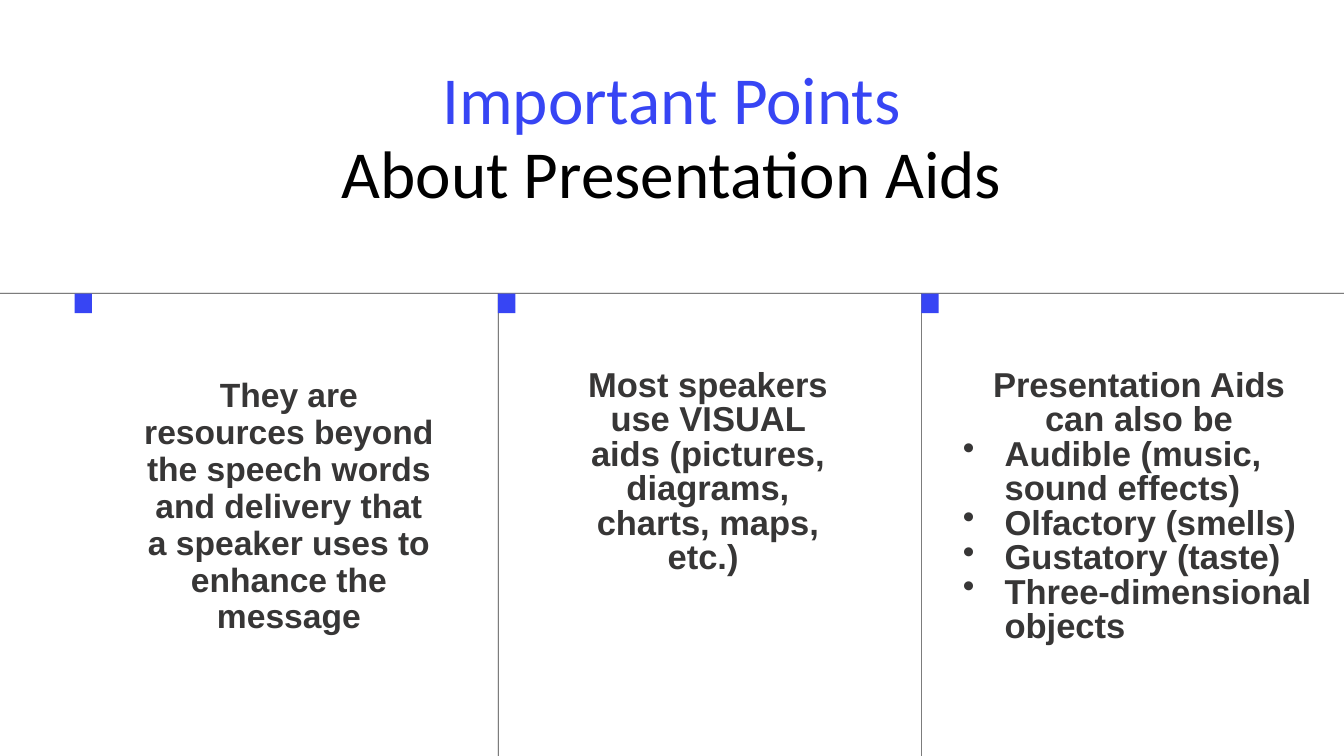
from pptx import Presentation
from pptx.dml.color import RGBColor
from pptx.enum.shapes import MSO_SHAPE
from pptx.enum.text import PP_ALIGN
from pptx.util import Pt
from lxml.etree import SubElement
from pptx.oxml.ns import qn

SCALE = 9144
WIDTH, HEIGHT = 2000, 1125
BLUE, GREY, BLACK = "3745F4", "373636", "000000"
RULE_TOP, RULE = 436, 1
COLUMN_LEFT, COLUMN_STEP = 111, 630


def px(length):
    """Turn px into EMU."""
    return length * SCALE


def color(hex_code):
    """Turn a hex string into a colour."""
    return RGBColor.from_string(hex_code)


def add_block(page, left, top, width, height, fill):
    """Draw a plain filled rectangle."""
    block = page.shapes.add_shape(
        MSO_SHAPE.RECTANGLE, px(left), px(top), px(width), px(height))
    block.shadow.inherit = False
    block.fill.solid()
    block.fill.fore_color.rgb = color(fill)
    block.line.fill.background()


def add_frame(page, left, top, width, height):
    """Place a wrapping text box without margins and return its frame."""
    box = page.shapes.add_textbox(px(left), px(top), px(width), px(height))
    frame = box.text_frame
    frame.word_wrap = True
    frame.margin_left = frame.margin_right = 0
    frame.margin_top = frame.margin_bottom = 0
    return frame


def style_body(para, size, spacing):
    """Give a paragraph the bold body font and fixed line spacing."""
    para.line_spacing = Pt(spacing)
    para.font.name = "Arial"
    para.font.size = Pt(size)
    para.font.bold = True
    para.font.color.rgb = color(GREY)


def set_indent(para, margin, first=0):
    """Set the left margin and first-line indent of a paragraph."""
    properties = para._p.get_or_add_pPr()
    properties.set("marL", str(px(margin)))
    properties.set("indent", str(px(first)))
    return properties


def add_title(page, left, top, width, height):
    """Write the two-line, two-colour title."""
    para = add_frame(page, left, top, width, height).paragraphs[0]
    para.alignment = PP_ALIGN.CENTER
    para.line_spacing = Pt(79.2)
    para.font.name = "Calibri"
    para.font.size = Pt(72)
    lines = [("Important Points", BLUE), ("About Presentation Aids", BLACK)]
    for number, (text, tone) in enumerate(lines):
        if number:
            para.add_line_break()
        span = para.add_run()
        span.text = text
        span.font.color.rgb = color(tone)


def add_grid(page, left, top, width, height):
    """Draw the top rule, the column dividers and the column markers."""
    add_block(page, left, top, width, RULE, GREY)
    for column in range(3):
        edge = left + COLUMN_LEFT + column * COLUMN_STEP
        if column:
            add_block(page, edge, top + RULE, RULE, height - RULE, GREY)
        add_block(page, edge, top + RULE, 26, 29, BLUE)


def add_point(page, left, top, width, height, text, bullets=(),
              size=37, spacing=37, margin=0):
    """Write a centred statement, followed by any bullets."""
    frame = add_frame(page, left, top, width, height)
    para = frame.paragraphs[0]
    para.text = text
    para.alignment = PP_ALIGN.CENTER
    style_body(para, size, spacing)
    set_indent(para, margin)
    for bullet in bullets:
        para = frame.add_paragraph()
        para.text = bullet
        style_body(para, size, spacing)
        properties = set_indent(para, 62, -62)
        mark = SubElement(properties, qn("a:buChar"))
        mark.set("char", "•")
        properties.remove(mark)
        properties.insert_element_before(
            mark, "a:tabLst", "a:defRPr", "a:extLst")


def main():
    """Build and save the slide."""
    deck = Presentation()
    deck.slide_width, deck.slide_height = px(WIDTH), px(HEIGHT)
    page = deck.slides.add_slide(deck.slide_layouts[6])
    add_title(page, 383, 96, 1233, 332)
    add_grid(page, 0, RULE_TOP, WIDTH, HEIGHT - RULE_TOP)
    add_point(page, 171, 561, 476, 505,
              "They are resources beyond the speech words and delivery that "
              "a speaker uses to enhance the message",
              size=36, spacing=39.6, margin=42)
    add_point(page, 853, 550, 401, 311,
              "Most speakers use VISUAL aids (pictures, diagrams, charts, "
              "maps, etc.) ")
    add_point(page, 1433, 550, 524, 571, "Presentation Aids can also be",
              ["Audible (music, sound effects)", "Olfactory (smells)",
               "Gustatory (taste)", "Three-dimensional objects"])
    deck.save("out.pptx")


if __name__ == "__main__":
    main()
